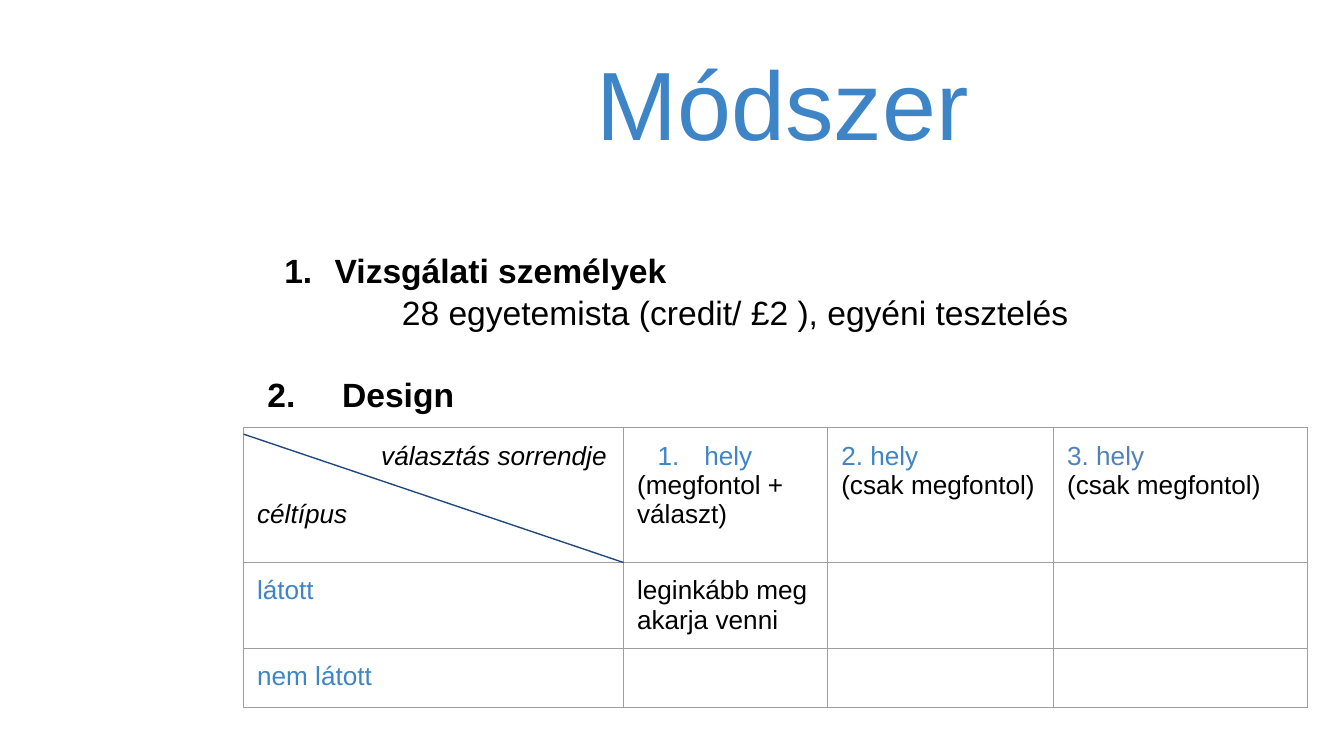
from dataclasses import dataclass

from lxml import etree
from pptx import Presentation
from pptx.dml.color import RGBColor
from pptx.enum.shapes import MSO_CONNECTOR
from pptx.enum.text import MSO_ANCHOR, MSO_AUTO_SIZE, PP_ALIGN
from pptx.oxml.ns import qn
from pptx.util import Pt

STRAIGHT = MSO_CONNECTOR.STRAIGHT
LEFT, CENTER = PP_ALIGN.LEFT, PP_ALIGN.CENTER
TOP, BOTTOM = MSO_ANCHOR.TOP, MSO_ANCHOR.BOTTOM


@dataclass(frozen=True)
class Theme:
    font: str = "Arial"
    accent: str = "3D85C6"
    accent_alt: str = "4F81BD"
    ink: str = "000000"
    grid: str = "9E9E9E"
    diagonal: str = "1F497D"
    title_size: float = 52
    body_size: float = 18
    table_size: float = 14
    line_width: float = 0.75
    inset: float = 7.2


theme = Theme()


def write(frame, text, size, color=theme.ink, bold=False, italic=False, align=LEFT,
          margin=0, indent=0, before=0, number=None):
    """Fill the frame's empty first paragraph, or append a new one."""
    para = frame.paragraphs[0]
    if para.runs:
        para = frame.add_paragraph()
    para.alignment = align
    para.space_before = Pt(before)
    properties = para._p.get_or_add_pPr()
    properties.set("marL", str(Pt(margin)))
    properties.set("indent", str(Pt(indent)))
    if number:
        etree.SubElement(properties, qn("a:buAutoNum"), type="arabicPeriod", startAt=str(number))
    else:
        etree.SubElement(properties, qn("a:buNone"))
    if not text:
        etree.SubElement(para._p, qn("a:endParaRPr"), sz=str(size * 100))
        return
    span = para.add_run()
    span.text = text
    span.font.name = theme.font
    span.font.size = Pt(size)
    span.font.bold = bold
    span.font.italic = italic
    span.font.color.rgb = RGBColor.from_string(color)


def draw_borders(cell):
    properties = cell._tc.get_or_add_tcPr()
    for position, side in enumerate(("a:lnL", "a:lnR", "a:lnT", "a:lnB")):
        border = etree.Element(qn(side), w=str(Pt(theme.line_width)))
        fill = etree.SubElement(border, qn("a:solidFill"))
        etree.SubElement(fill, qn("a:srgbClr"), val=theme.grid)
        properties.insert(position, border)


deck = Presentation()
deck.slide_width, deck.slide_height = Pt(720), Pt(405)
page = deck.slides.add_slide(deck.slide_layouts[0])
title, body = page.placeholders

# Title and body placeholders
for box, left, top, height, anchor in ((title, 139.7, 5, 87.8, BOTTOM),
                                       (body, 136.1, 105.1, 290.9, TOP)):
    box.left, box.top, box.width, box.height = Pt(left), Pt(top), Pt(559.4), Pt(height)
    frame = box.text_frame
    frame.word_wrap = True
    frame.auto_size = MSO_AUTO_SIZE.NONE
    frame.vertical_anchor = anchor
    frame.margin_left = frame.margin_right = Pt(theme.inset)
    frame.margin_top = frame.margin_bottom = Pt(theme.inset)

write(title.text_frame, "Módszer", theme.title_size, theme.accent, align=CENTER)

# Numbered points
body.text_frame.margin_top = Pt(28.6)
write(body.text_frame, "Vizsgálati személyek", theme.body_size, bold=True,
      margin=36, indent=-27, number=1)
write(body.text_frame, "28 egyetemista (credit/ £2 ), egyéni tesztelés", theme.body_size,
      margin=72, before=1)
write(body.text_frame, "Design", theme.body_size, bold=True,
      margin=40, indent=-40, before=22.4, number=2)

# Design table: each cell is a list of (text, format) lines
accent = {"color": theme.accent}
blank = [("", {})]
rows = [
    [[("választás sorrendje", {"italic": True, "margin": 66.5}),
      ("céltípus", {"italic": True, "before": 15.7})],
     [("hely", {**accent, "margin": 36, "indent": -25, "number": 1}),
      ("(megfontol + választ)", {})],
     [("2. hely", accent), ("(csak megfontol)", {})],
     [("3. hely", {"color": theme.accent_alt}), ("(csak megfontol)", {})]],
    [[("látott", accent)], [("leginkább meg akarja venni", {})], blank, blank],
    [[("nem látott", accent)], blank, blank, blank],
]
column_widths = (203.6, 109.4, 121, 136.2)
row_heights = (72.2, 46, 30.4)
table_left, table_top = 130.5, 229.2

table = page.shapes.add_table(len(rows), len(column_widths), Pt(table_left), Pt(table_top),
                              Pt(sum(column_widths)), Pt(sum(row_heights))).table
table.first_row = table.horz_banding = False
for column, width in zip(table.columns, column_widths):
    column.width = Pt(width)
for row, height, contents in zip(table.rows, row_heights, rows):
    row.height = Pt(height)
    for cell, lines in zip(row.cells, contents):
        cell.margin_left = cell.margin_right = Pt(theme.inset)
        cell.margin_top = cell.margin_bottom = Pt(theme.inset)
        cell.fill.background()
        draw_borders(cell)
        for text, style in lines:
            write(cell.text_frame, text, theme.table_size, **style)

# Diagonal of the header cell
diagonal = page.shapes.add_connector(STRAIGHT, Pt(table_left), Pt(232.6),
                                     Pt(table_left + column_widths[0]),
                                     Pt(table_top + row_heights[0]))
diagonal.line.color.rgb = RGBColor.from_string(theme.diagonal)
diagonal.line.width = Pt(theme.line_width)
etree.SubElement(diagonal._element.spPr, qn("a:effectLst"))

deck.save("out.pptx")
